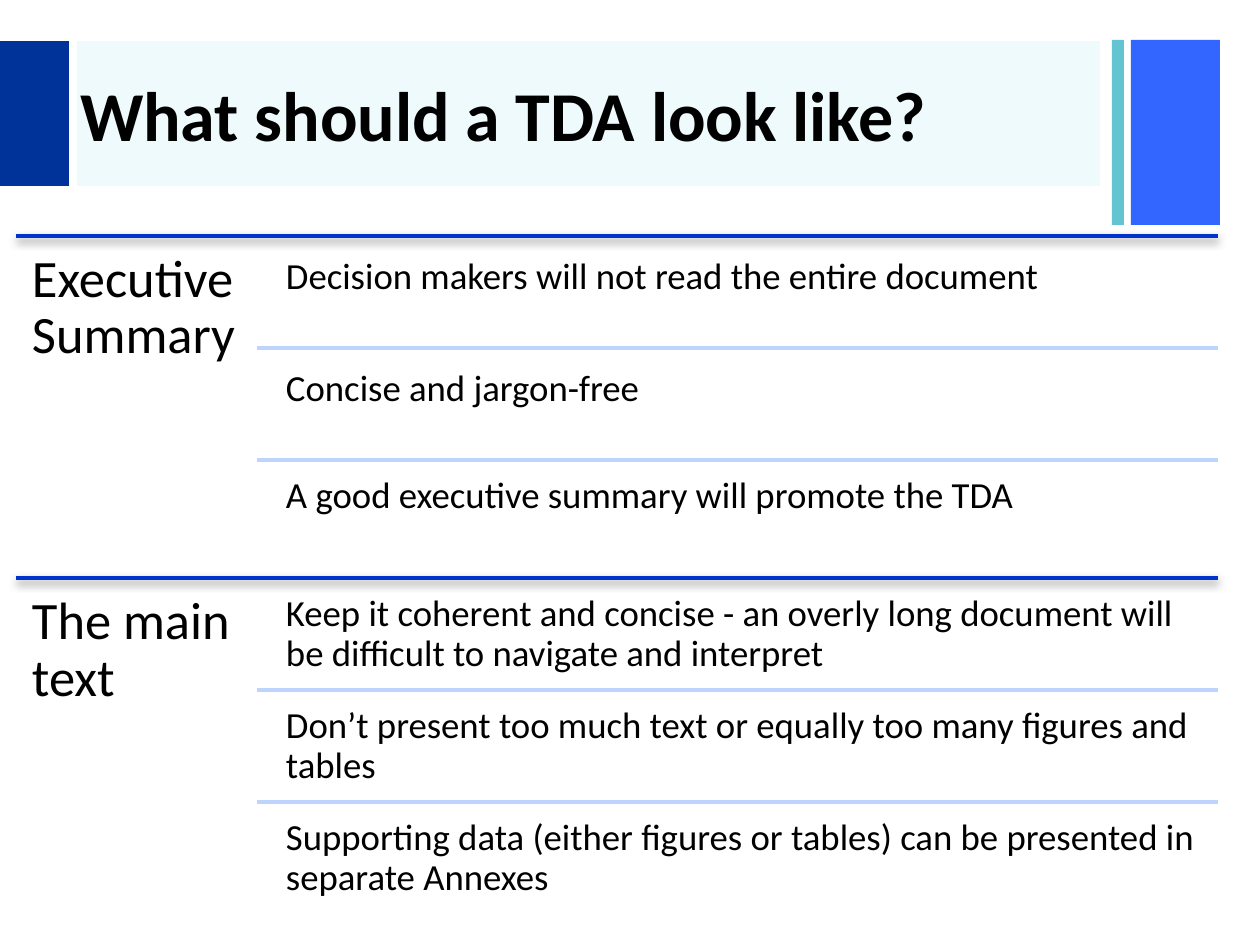
from lxml import etree
from pptx import Presentation
from pptx.dml.color import RGBColor
from pptx.enum.shapes import MSO_CONNECTOR, MSO_SHAPE
from pptx.enum.text import MSO_ANCHOR
from pptx.oxml.ns import qn
from pptx.util import Emu, Pt

SCALE = 914400 / 126
BLACK = RGBColor(0x00, 0x00, 0x00)
NAVY = RGBColor(0x00, 0x33, 0x99)
BLUE = RGBColor(0x33, 0x66, 0xFF)
TEAL = RGBColor(0x65, 0xC4, 0xD2)
AQUA = RGBColor(0x14, 0xC5, 0xD0)
RULE_BLUE = RGBColor(0x00, 0x33, 0xCC)
PALE_BLUE = RGBColor(0xBD, 0xD4, 0xFF)

presentation = Presentation()
presentation.slide_width = Emu(round(1260 * SCALE))
presentation.slide_height = Emu(round(945 * SCALE))
slide = presentation.slides.add_slide(presentation.slide_layouts[6])


def write(text, *, box, size, inset, bold=False, spacing=1.0, anchor=MSO_ANCHOR.TOP):
    frame = slide.shapes.add_textbox(*[Emu(round(n * SCALE)) for n in box]).text_frame
    frame.word_wrap = True
    frame.vertical_anchor = anchor
    frame.margin_left = frame.margin_right = Emu(round(inset * SCALE))
    frame.margin_top = frame.margin_bottom = Emu(round(inset * SCALE))
    paragraph = frame.paragraphs[0]
    paragraph.line_spacing = spacing
    run = paragraph.add_run()
    run.text = text
    run.font.name = "Calibri"
    run.font.size = Pt(size)
    run.font.bold = bold
    run.font.color.rgb = BLACK


def draw_rule(left, y, color, width, shadow=False):
    ends = [Emu(round(n * SCALE)) for n in (left, y, 1218, y)]
    rule = slide.shapes.add_connector(MSO_CONNECTOR.STRAIGHT, *ends)
    rule.line.color.rgb = color
    rule.line.width = Pt(width)
    effects = etree.SubElement(rule._element.spPr, qn("a:effectLst"))
    if shadow:
        outer = etree.SubElement(
            effects, qn("a:outerShdw"), blurRad=str(Pt(5)), dist=str(Pt(2)),
            dir="5400000", algn="ctr", rotWithShape="0",
        )
        gray = etree.SubElement(outer, qn("a:srgbClr"), val="808080")
        etree.SubElement(gray, qn("a:alpha"), val="75000")


header_blocks = [
    ((1131, 40, 89, 185), BLUE, 100),
    ((1112, 40, 12, 185), TEAL, 100),
    ((77, 41, 1023, 145), AQUA, 7),
    ((0, 41, 69, 145), NAVY, 100),
]
for box, color, opacity in header_blocks:
    block = slide.shapes.add_shape(
        MSO_SHAPE.RECTANGLE, *[Emu(round(n * SCALE)) for n in box]
    )
    block.shadow.inherit = False
    block.line.fill.background()
    block.fill.solid()
    block.fill.fore_color.rgb = color
    if opacity < 100:
        tint = block._element.spPr.find(".//" + qn("a:srgbClr"))
        etree.SubElement(tint, qn("a:alpha"), val=str(opacity * 1000))

write("What should a TDA look like?", box=(68, 43, 1042, 141), size=40, inset=12,
      bold=True, anchor=MSO_ANCHOR.MIDDLE)

sections = [
    (236, "Executive Summary", [
        ("Decision makers will not read the entire document", 1.0),
        ("Concise and jargon-free", 1.0),
        ("A good executive summary will promote the TDA", 0.9),
    ]),
    (578, "The main text", [
        ("Keep it coherent and concise - an overly long document will be "
         "difficult to navigate and interpret", 0.9),
        ("Don’t present too much text or equally too many figures and tables", 0.9),
        ("Supporting data (either figures or tables) can be presented in "
         "separate Annexes", 0.9),
    ]),
]
row_pitch = 112
for top, heading, points in sections:
    draw_rule(16, top, RULE_BLUE, 2.25, shadow=True)
    write(heading, box=(16, top, 241, 342), size=30, inset=16, spacing=0.9)
    for row, (point, spacing) in enumerate(points):
        row_top = top + row * row_pitch
        if row:
            draw_rule(257, row_top, PALE_BLUE, 2)
        write(point, box=(275, row_top + 6, 943, 107), size=21, inset=11, spacing=spacing)

presentation.save("out.pptx")
